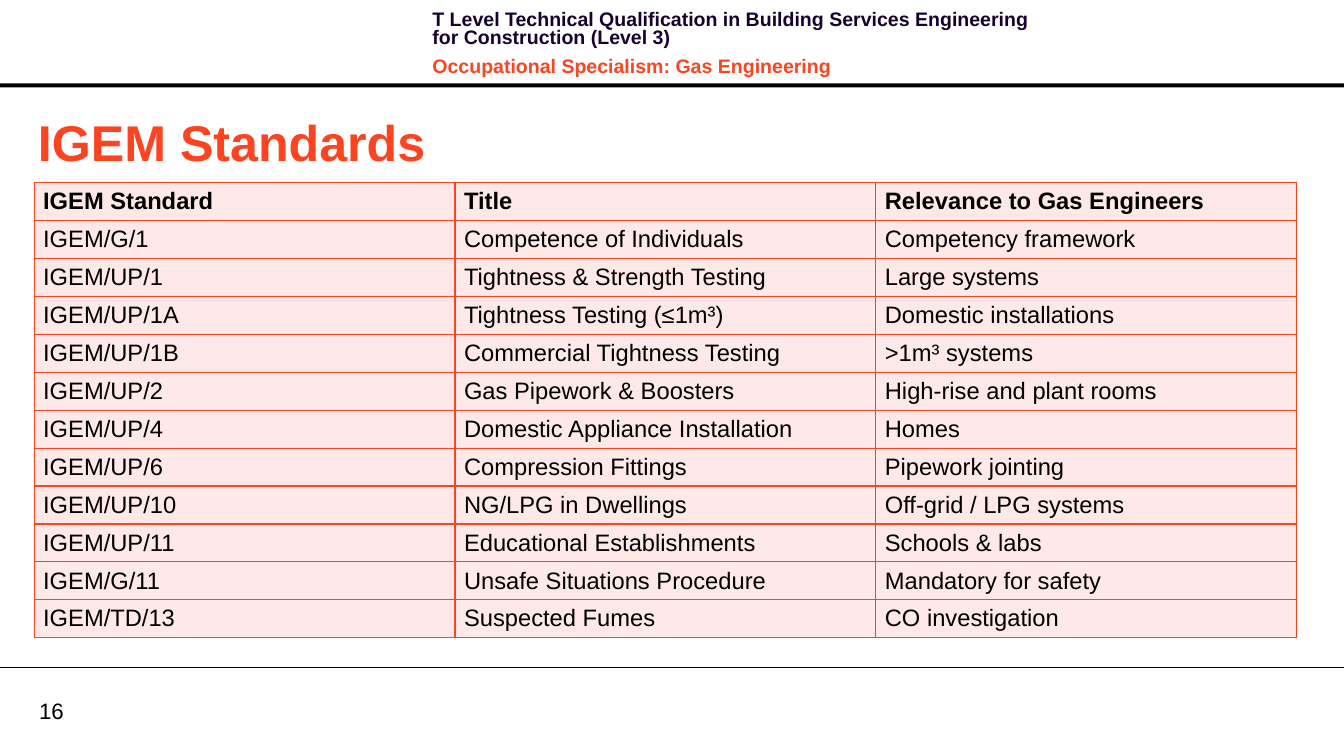
from dataclasses import dataclass

from lxml.etree import SubElement
from pptx import Presentation
from pptx.dml.color import RGBColor
from pptx.enum.shapes import MSO_CONNECTOR, MSO_SHAPE
from pptx.enum.text import MSO_ANCHOR
from pptx.oxml import parse_xml
from pptx.oxml.ns import nsdecls, qn
from pptx.slide import Slide
from pptx.table import _Cell
from pptx.util import Pt

COLORS = {
    "black": "000000",
    "navy": "170130",
    "orange": "FC4421",
    "blush": "FEE9E8",
}
FONT = "Arial"
SLIDE_WIDTH, SLIDE_HEIGHT = 964.08, 538.56
TABLE_LEFT, TABLE_TOP = 24.48, 131.04
COLUMN_WIDTH, ROW_HEIGHT = 301.9, 27.18

STANDARDS = [
    ("IGEM Standard", "Title", "Relevance to Gas Engineers"),
    ("IGEM/G/1", "Competence of Individuals", "Competency framework"),
    ("IGEM/UP/1", "Tightness & Strength Testing", "Large systems"),
    ("IGEM/UP/1A", "Tightness Testing (≤1m³)", "Domestic installations"),
    ("IGEM/UP/1B", "Commercial Tightness Testing", ">1m³ systems"),
    ("IGEM/UP/2", "Gas Pipework & Boosters", "High-rise and plant rooms"),
    ("IGEM/UP/4", "Domestic Appliance Installation", "Homes"),
    ("IGEM/UP/6", "Compression Fittings", "Pipework jointing"),
    ("IGEM/UP/10", "NG/LPG in Dwellings", "Off-grid / LPG systems"),
    ("IGEM/UP/11", "Educational Establishments", "Schools & labs"),
    ("IGEM/G/11", "Unsafe Situations Procedure", "Mandatory for safety"),
    ("IGEM/TD/13", "Suspected Fumes", "CO investigation"),
]


@dataclass(frozen=True)
class Line:
    text: str
    size: float
    color: str
    bold: bool = True
    spacing: float | None = None
    before: float = 0
    after: float = 0


@dataclass(frozen=True)
class Caption:
    left: float
    top: float
    width: float
    height: float
    lines: tuple[Line, ...]
    anchor: MSO_ANCHOR = MSO_ANCHOR.MIDDLE
    inset_x: float = 7.2
    inset_y: float = 3.6


CAPTIONS = (
    Caption(28.08, 499.68, 46.08, 19.44, (Line("16", 16, "black", bold=False),),
            inset_x=0, inset_y=0),
    Caption(303.12, 5.04, 458.64, 46.08, (
        Line("T Level Technical Qualification in Building Services Engineering "
             "for Construction (Level 3)", 14, "navy", spacing=13.1, after=4),
        Line("Occupational Specialism: Gas Engineering", 14, "orange",
             spacing=13.1, before=4, after=4),
    ), anchor=MSO_ANCHOR.TOP),
    Caption(20.16, 75.6, 915.84, 51.12, (Line("IGEM Standards", 36, "orange"),)),
)


def rgb(name: str) -> RGBColor:
    return RGBColor.from_string(COLORS[name])


def style_font(paragraph, size: float, color: str, bold: bool) -> None:
    font = paragraph.font
    font.name = FONT
    font.size = Pt(size)
    font.bold = bold
    font.color.rgb = rgb(color)


def draw_caption(slide: Slide, caption: Caption) -> None:
    frame = slide.shapes.add_textbox(
        Pt(caption.left), Pt(caption.top), Pt(caption.width), Pt(caption.height)
    ).text_frame
    frame.word_wrap = True
    frame.vertical_anchor = caption.anchor
    frame.margin_left = frame.margin_right = Pt(caption.inset_x)
    frame.margin_top = frame.margin_bottom = Pt(caption.inset_y)
    for index, line in enumerate(caption.lines):
        paragraph = frame.add_paragraph() if index else frame.paragraphs[0]
        paragraph.text = line.text
        if line.spacing:
            paragraph.line_spacing = Pt(line.spacing)
        paragraph.space_before = Pt(line.before)
        paragraph.space_after = Pt(line.after)
        style_font(paragraph, line.size, line.color, line.bold)


def draw_rules(slide: Slide) -> None:
    header_rule = slide.shapes.add_shape(
        MSO_SHAPE.RECTANGLE, Pt(0), Pt(59.76), Pt(SLIDE_WIDTH), Pt(2.88))
    header_rule.shadow.inherit = False
    header_rule.fill.solid()
    header_rule.fill.fore_color.rgb = rgb("black")
    header_rule.line.fill.background()
    footer_rule = slide.shapes.add_connector(
        MSO_CONNECTOR.STRAIGHT, Pt(0), Pt(478.8), Pt(SLIDE_WIDTH), Pt(478.8))
    footer_rule.line.color.rgb = rgb("black")
    footer_rule.line.width = Pt(0.75)
    SubElement(footer_rule._element.spPr, qn("a:effectLst"))


def border_cell(cell: _Cell) -> None:
    properties = cell._tc.get_or_add_tcPr()
    for index, side in enumerate(("lnL", "lnR", "lnT", "lnB")):
        properties.insert(index, parse_xml(
            f'<a:{side} {nsdecls("a")} w="{Pt(1)}"><a:solidFill>'
            f'<a:srgbClr val="{COLORS["orange"]}"/></a:solidFill></a:{side}>'))


def draw_standards(slide: Slide) -> None:
    row_count, column_count = len(STANDARDS), len(STANDARDS[0])
    table = slide.shapes.add_table(
        row_count, column_count, Pt(TABLE_LEFT), Pt(TABLE_TOP),
        Pt(COLUMN_WIDTH * column_count), Pt(ROW_HEIGHT * row_count)).table
    table.horz_banding = False
    for column in table.columns:
        column.width = Pt(COLUMN_WIDTH)
    for row_index, (row, entries) in enumerate(zip(table.rows, STANDARDS)):
        row.height = Pt(ROW_HEIGHT)
        for cell, entry in zip(row.cells, entries):
            cell.text = entry
            cell.vertical_anchor = MSO_ANCHOR.MIDDLE
            cell.margin_left = cell.margin_right = Pt(6.48)
            cell.margin_top = cell.margin_bottom = Pt(3.4)
            cell.fill.solid()
            cell.fill.fore_color.rgb = rgb("blush")
            border_cell(cell)
            style_font(cell.text_frame.paragraphs[0], 17, "black", row_index == 0)


def main() -> None:
    presentation = Presentation()
    presentation.slide_width = Pt(SLIDE_WIDTH)
    presentation.slide_height = Pt(SLIDE_HEIGHT)
    slide = presentation.slides.add_slide(presentation.slide_layouts[6])
    draw_rules(slide)
    for caption in CAPTIONS:
        draw_caption(slide, caption)
    draw_standards(slide)
    presentation.save("out.pptx")


if __name__ == "__main__":
    main()
